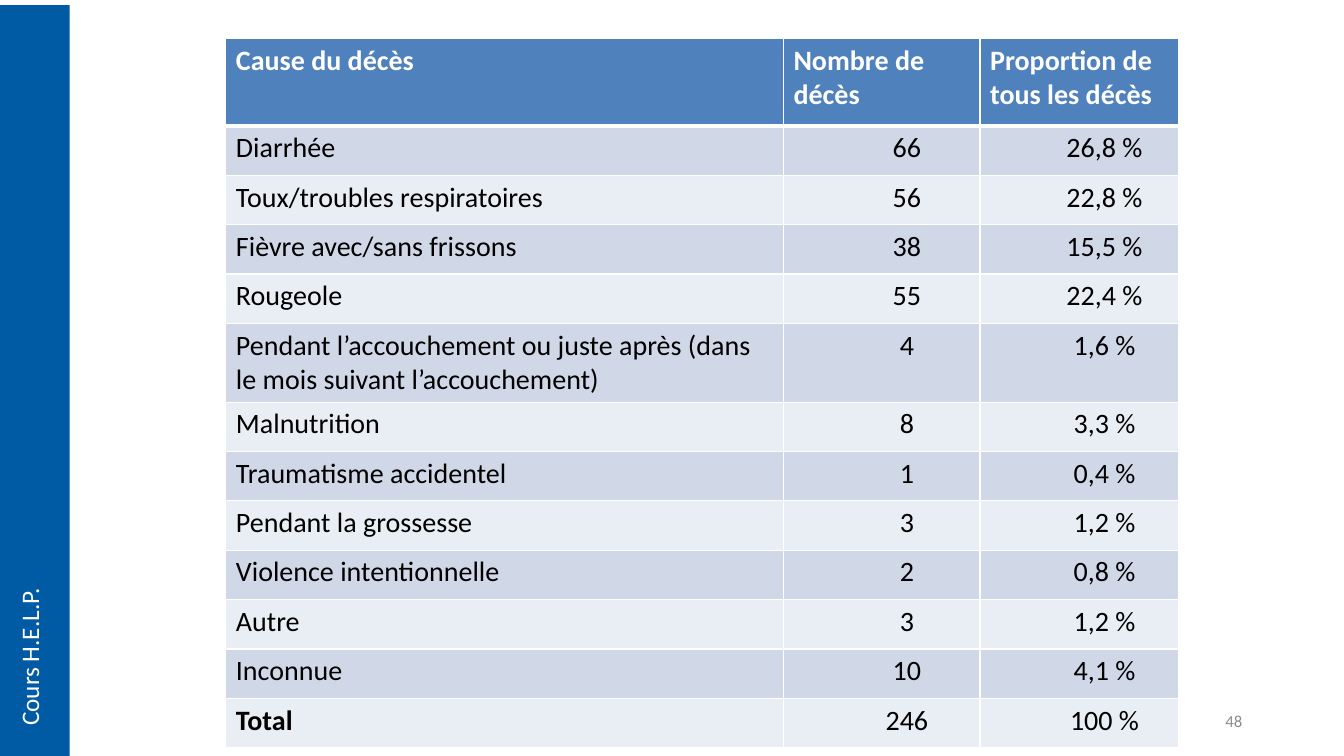
from dataclasses import dataclass

import lxml.etree
import pptx
import pptx.dml.color
import pptx.enum.shapes
import pptx.enum.text
import pptx.oxml.ns
import pptx.util

Inches = pptx.util.Inches
ALIGN = pptx.enum.text.PP_ALIGN


@dataclass(frozen=True)
class Theme:
    font: str = "Calibri"
    white: str = "FFFFFF"
    black: str = "000000"
    header: str = "4F81BD"
    band_dark: str = "D0D8E8"
    band_light: str = "E9EDF4"
    sidebar: str = "005BA4"
    number: str = "8C8C8C"
    table_size: int = 20
    sidebar_size: int = 18
    number_size: int = 12


@dataclass(frozen=True)
class DeathCause:
    name: str
    deaths: int
    share: str
    bold: bool = False


THEME = Theme()
HEADINGS = ("Cause du décès", "Nombre de décès", "Proportion de tous les décès")
CAUSES = (
    DeathCause("Diarrhée", 66, "26,8 %"),
    DeathCause("Toux/troubles respiratoires", 56, "22,8 %"),
    DeathCause("Fièvre avec/sans frissons", 38, "15,5 %"),
    DeathCause("Rougeole", 55, "22,4 %"),
    DeathCause("Pendant l’accouchement ou juste après (dans le mois suivant l’accouchement)", 4, "1,6 %"),
    DeathCause("Malnutrition", 8, "3,3 %"),
    DeathCause("Traumatisme accidentel", 1, "0,4 %"),
    DeathCause("Pendant la grossesse", 3, "1,2 %"),
    DeathCause("Violence intentionnelle", 2, "0,8 %"),
    DeathCause("Autre", 3, "1,2 %"),
    DeathCause("Inconnue", 10, "4,1 %"),
    DeathCause("Total", 246, "100 %", bold=True),
)
COLUMN_WIDTHS = (5.53, 1.95, 1.97)
HEADER_HEIGHT, ROW_HEIGHT = 0.87, 0.49


def rgb(color: str) -> pptx.dml.color.RGBColor:
    return pptx.dml.color.RGBColor.from_string(color)


def format_text(paragraph, size: int, color: str, bold: bool = False) -> None:
    for run in paragraph.runs:
        run.font.name = THEME.font
        run.font.size = pptx.util.Pt(size)
        run.font.color.rgb = rgb(color)
        run.font.bold = bold


def add_borders(cell, row: int) -> None:
    """White grid with a thicker rule below the header."""
    qn = pptx.oxml.ns.qn
    properties = cell._tc.get_or_add_tcPr()
    thick_side = {0: "lnB", 1: "lnT"}.get(row)
    for side in ("lnL", "lnR", "lnT", "lnB"):
        width = pptx.util.Pt(3 if side == thick_side else 1)
        line = lxml.etree.SubElement(properties, qn(f"a:{side}"), w=str(width))
        fill = lxml.etree.SubElement(line, qn("a:solidFill"))
        lxml.etree.SubElement(fill, qn("a:srgbClr"), val=THEME.white)


def fill_cell(cell, row: int, column: int, text: str, bold: bool) -> None:
    header = row == 0
    add_borders(cell, row)
    band = THEME.band_dark if row % 2 else THEME.band_light
    cell.fill.solid()
    cell.fill.fore_color.rgb = rgb(THEME.header if header else band)
    cell.text_frame.text = text
    paragraph = cell.text_frame.paragraphs[0]
    if column and not header:
        paragraph.level = 1
        paragraph.alignment = ALIGN.CENTER
        paragraph._p.get_or_add_pPr().set("marL", str(Inches(0.5)))
    format_text(paragraph, THEME.table_size, THEME.white if header else THEME.black, bold)


def add_death_table(slide) -> None:
    height = HEADER_HEIGHT + ROW_HEIGHT * len(CAUSES)
    table = slide.shapes.add_table(
        len(CAUSES) + 1, len(HEADINGS),
        Inches(2.24), Inches(0.38), Inches(sum(COLUMN_WIDTHS)), Inches(height),
    ).table
    for column, width in zip(table.columns, COLUMN_WIDTHS):
        column.width = Inches(width)
    for index, row in enumerate(table.rows):
        row.height = Inches(ROW_HEIGHT if index else HEADER_HEIGHT)
    lines = [(HEADINGS, True)]
    lines += [((cause.name, str(cause.deaths), cause.share), cause.bold) for cause in CAUSES]
    for row, (texts, bold) in enumerate(lines):
        for column, text in enumerate(texts):
            fill_cell(table.cell(row, column), row, column, text, bold and (row == 0 or column == 0))


def add_sidebar(slide) -> None:
    bar = slide.shapes.add_shape(
        pptx.enum.shapes.MSO_SHAPE.RECTANGLE, Inches(0), Inches(0.05), Inches(0.69), Inches(7.45))
    bar.shadow.inherit = False
    bar.fill.solid()
    bar.fill.fore_color.rgb = rgb(THEME.sidebar)
    bar.line.fill.background()

    label = slide.shapes.add_textbox(Inches(0.09), Inches(5.72), Inches(0.5), Inches(1.58))
    frame = label.text_frame
    frame.text = "Cours H.E.L.P."
    frame.word_wrap = False
    frame.auto_size = pptx.enum.text.MSO_AUTO_SIZE.SHAPE_TO_FIT_TEXT
    frame._txBody.bodyPr.set("vert", "vert270")
    format_text(frame.paragraphs[0], THEME.sidebar_size, THEME.white)


def add_slide_number(slide) -> None:
    box = slide.shapes.add_textbox(Inches(9.42), Inches(6.95), Inches(3), Inches(0.4))
    frame = box.text_frame
    frame.text = "48"
    frame.word_wrap = True
    frame.vertical_anchor = pptx.enum.text.MSO_ANCHOR.MIDDLE
    frame.paragraphs[0].alignment = ALIGN.RIGHT
    format_text(frame.paragraphs[0], THEME.number_size, THEME.number)


def main() -> None:
    presentation = pptx.Presentation()
    presentation.slide_width = Inches(13.33)
    presentation.slide_height = Inches(7.5)
    slide = presentation.slides.add_slide(presentation.slide_layouts[6])
    add_death_table(slide)
    add_sidebar(slide)
    add_slide_number(slide)
    presentation.save("out.pptx")


if __name__ == "__main__":
    main()
